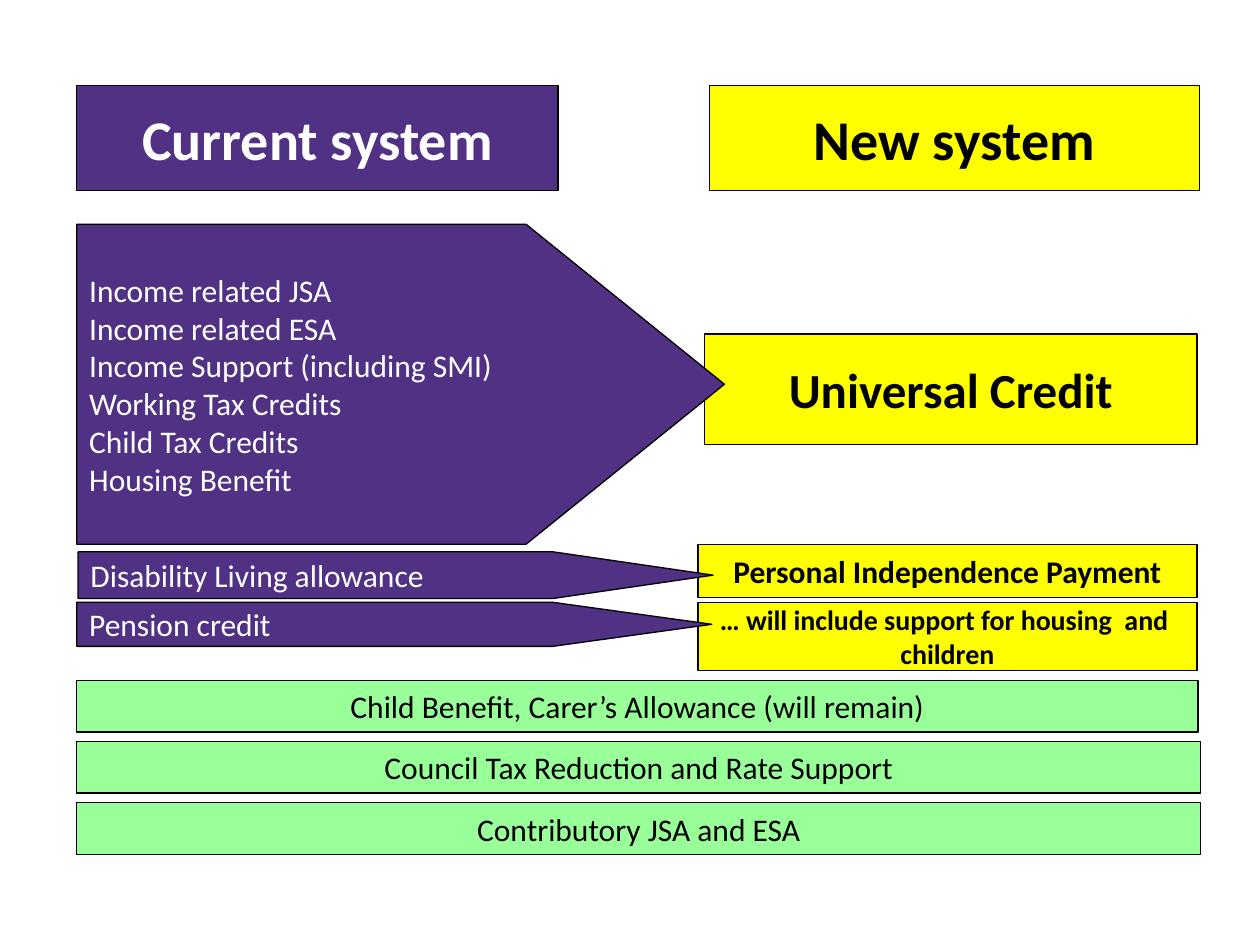
from pptx import Presentation
from pptx.dml.color import RGBColor
from pptx.enum.shapes import MSO_SHAPE
from pptx.enum.text import MSO_ANCHOR, MSO_AUTO_SIZE, PP_ALIGN
from pptx.util import Inches, Pt

HUES = {
    "old": "513184",
    "new": "FFFF00",
    "kept": "99FF99",
    "dark": "000000",
    "light": "FFFFFF",
}
COLS, ROWS = 100, 75
LEFT = 6.1


class Board:
    """Style and current slide; places are in columns and rows of the grid."""

    font = "Calibri"
    edge = Pt(0.75)

    def __init__(self, deck, layout):
        self.slide = deck.slides.add_slide(layout)
        self.col = deck.slide_width / COLS
        self.row = deck.slide_height / ROWS

    def area(self, x, y, w, h):
        return (round(x * self.col), round(y * self.row),
                round(w * self.col), round(h * self.row))

    def paint(self, item, hue):
        item.fill.solid()
        item.fill.fore_color.rgb = RGBColor.from_string(HUES[hue])
        item.line.color.rgb = RGBColor.from_string(HUES["dark"])
        item.line.width = self.edge

    def label(self, item, lines, size, ink, bold=False, align=PP_ALIGN.CENTER):
        frame = item.text_frame
        frame.word_wrap = True
        frame.auto_size = MSO_AUTO_SIZE.NONE
        frame.vertical_anchor = MSO_ANCHOR.MIDDLE
        for i, line in enumerate(lines):
            para = frame.add_paragraph() if i else frame.paragraphs[0]
            para.alignment = align
            para.space_before = Pt(0)
            run = para.add_run()
            run.text = line
            run.font.name = self.font
            run.font.size = Pt(size)
            run.font.bold = bold
            run.font.color.rgb = RGBColor.from_string(HUES[ink])

    def head(self, index, text, place, hue, ink):
        item = self.slide.placeholders[index]
        item.left, item.top, item.width, item.height = self.area(*place)
        self.paint(item, hue)
        self.label(item, [text], 32, ink, True)

    def shape(self, kind, place, hue):
        item = self.slide.shapes.add_shape(kind, *self.area(*place))
        item.shadow.inherit = False
        self.paint(item, hue)
        return item

    def box(self, text, place, hue, size=18, bold=False):
        item = self.shape(MSO_SHAPE.RECTANGLE, place, hue)
        self.label(item, [text], size, "dark", bold)

    def arrow(self, lines, place, point):
        item = self.shape(MSO_SHAPE.PENTAGON, place, "old")
        item.adjustments[0] = point
        self.label(item, lines, 18, "light", align=PP_ALIGN.LEFT)

    def tidy(self):
        """Remove the placeholders left empty."""
        for item in list(self.slide.placeholders):
            if not item.text_frame.text:
                item.element.getparent().remove(item.element)


def main():
    deck = Presentation()
    deck.slide_width, deck.slide_height = Inches(10), Inches(7.5)
    board = Board(deck, deck.slide_layouts.get_by_name("Comparison"))

    board.head(1, "Current system", (LEFT, 6.8, 38.2, 8.3), "old", "light")
    board.head(3, "New system", (56.3, 6.8, 38.9, 8.3), "new", "dark")

    for text, place, size in (
        ("Universal Credit", (55.9, 26.5, 39.1, 8.8), 28),
        ("Personal Independence Payment", (55.4, 43.2, 39.6, 4.2), 18),
        ("… will include support for housing  and  children",
         (55.4, 47.8, 39.6, 5.4), 16),
    ):
        board.box(text, place, "new", size, True)

    means = ["Income related JSA", "Income related ESA",
             "Income Support (including SMI)", "Working Tax Credits",
             "Child Tax Credits", "Housing Benefit"]
    for lines, place, point in (
        (means, (LEFT, 17.8, 51.4, 25.4), 0.62),
        (["Disability Living allowance"], (6.2, 43.8, 50.4, 3.7), 3.43),
        (["Pension credit"], (LEFT, 47.8, 50.4, 3.5), 3.61),
    ):
        board.arrow(lines, place, point)

    for i, (text, width) in enumerate((
        ("Child Benefit, Carer’s Allowance (will remain)", 89),
        ("Council Tax Reduction and Rate Support", 89.2),
        ("Contributory JSA and ESA", 89.2),
    )):
        board.box(text, (LEFT, 54 + 4.85 * i, width, 4.1), "kept")

    board.tidy()
    deck.save("out.pptx")


if __name__ == "__main__":
    main()
